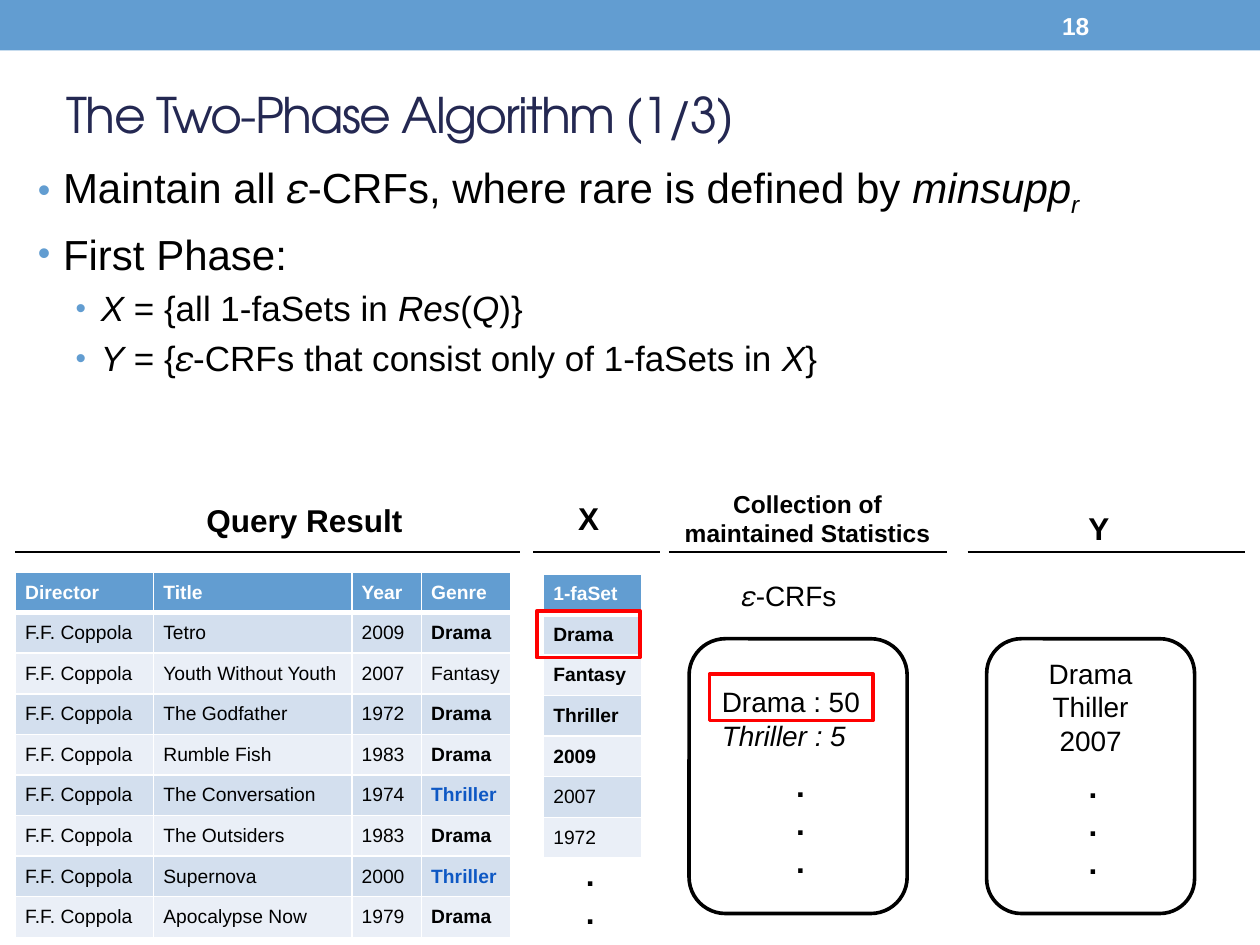
from dataclasses import dataclass

from lxml import etree
from pptx import Presentation
from pptx.dml.color import RGBColor
from pptx.enum import shapes, text
from pptx.oxml.ns import qn
from pptx.util import Pt


@dataclass(frozen=True)
class Theme:
    blue: str = "629DD1"
    navy: str = "242852"
    link: str = "0E58C4"
    red: str = "FF0000"
    black: str = "000000"
    white: str = "FFFFFF"
    bands: tuple = ("D3DFEE", "EAEFF7")
    body_font: str = "Arial"
    title_font: str = "TeX Gyre Adventor"
    title: int = 28
    levels: tuple = (24, 20)
    heading: int = 18
    label: int = 16
    small: int = 14
    cell: int = 11


THEME = Theme()

# Runs are (text, style): "i" italic, "b" bold, "s" subscript
TITLE = "The Two-Phase Algorithm (1/3)"
BULLETS = [
    (0, [("Maintain all 𝜀-CRFs, where rare is defined by ", ""), ("minsupp", "i"), ("r", "is")]),
    (0, [("First Phase:", "")]),
    (1, [("X", "i"), (" = {all 1-faSets in ", ""), ("Res", "i"), ("(", ""), ("Q", "i"), (")}", "")]),
    (1, [("Y", "i"), (" = {𝜀-CRFs that consist only of 1-faSets in ", ""), ("X", "i"), ("}", "")]),
]
DIRECTOR = "F.F. Coppola"
FILMS = [
    ("Tetro", "2009", "Drama"),
    ("Youth Without Youth", "2007", "Fantasy"),
    ("The Godfather", "1972", "Drama"),
    ("Rumble Fish", "1983", "Drama"),
    ("The Conversation", "1974", "Thriller"),
    ("The Outsiders", "1983", "Drama"),
    ("Supernova", "2000", "Thriller"),
    ("Apocalypse Now", "1979", "Drama"),
]
GENRE_STYLES = {"Drama": ("b", THEME.black), "Thriller": ("b", THEME.link)}
PLAIN = ("", THEME.black)
FASETS = ["Drama", "Fantasy", "Thriller", "2009", "2007", "1972"]
BOLD_FASETS = 4

# Text boxes: left, top, width, height, size, centred, wrapped, lines
HEADINGS = [
    (110.9, 283, 132.5, 29, THEME.heading, False, False, [("Query Result", "b")]),
    (323.3, 281.5, 26.6, 29, THEME.heading, False, False, [("X", "b")]),
    (382.3, 275.8, 158.4, 41, THEME.small, True, True,
     [("Collection of", "b"), ("maintained Statistics", "b")]),
    (614.9, 287.3, 22.3, 29, THEME.heading, False, True, [("Y", "b")]),
]
CONTENTS = [
    (416.9, 326.9, 68.4, 26.6, THEME.label, False, False, [("𝜀-CRFs", "")]),
    (405.4, 387.6, 153.4, 63, THEME.label, False, True,
     [("Drama : 50", ""), ("Thriller : 5", "i")]),
    (563.8, 371.5, 118.8, 65.5, THEME.label, True, True,
     [("Drama", ""), ("Thiller", ""), ("2007", "")]),
]
ELLIPSES = [(327.6, 485.3, 2), (447.8, 434.2, 3), (614.9, 434.9, 3)]  # left, top, dots
RULES = [(8.6, 297.4), (304.6, 377.3), (382.3, 541.4), (553, 711.4)]
RULE_TOP = 315.4
PANELS = [(393.8, 365, 124.6, 157), (563.8, 365, 118.8, 157)]
MARKERS = [(405.4, 385.2, 93.6, 26.6), (306.7, 349.2, 59, 26.6)]
ROW_HEIGHT = 23.2


def color(value):
    return RGBColor.from_string(value)


def add_run(paragraph, words, size, style="", fill=THEME.black, font=THEME.body_font):
    run = paragraph.add_run()
    run.text = words
    run.font.name = font
    run.font.size = Pt(size)
    run.font.bold = "b" in style
    run.font.italic = "i" in style
    run.font.color.rgb = color(fill)
    if "s" in style:
        run.font._element.set("baseline", "-25000")
    return run


def place(shape, left, top, width, height):
    shape.left, shape.top, shape.width, shape.height = map(Pt, (left, top, width, height))


def add_title(slide):
    title = slide.shapes.title
    place(title, 31, 31.7, 648, 67)
    frame = title.text_frame
    frame.auto_size = text.MSO_AUTO_SIZE.NONE
    frame.vertical_anchor = text.MSO_ANCHOR.MIDDLE
    paragraph = frame.paragraphs[0]
    paragraph.alignment = text.PP_ALIGN.LEFT
    run = add_run(paragraph, TITLE, THEME.title, "", THEME.navy, THEME.title_font)
    run.font._element.set("spc", "-100")


def add_bullet_mark(paragraph, level):
    properties = paragraph._p.get_or_add_pPr()
    properties.set("marL", str(Pt((14.4, 36)[level])))
    properties.set("indent", str(-Pt(14.4)))
    bullet_color = etree.SubElement(properties, qn("a:buClr"))
    etree.SubElement(bullet_color, qn("a:srgbClr")).set("val", THEME.blue)
    etree.SubElement(properties, qn("a:buSzPct")).set("val", "85000")
    etree.SubElement(properties, qn("a:buFont")).set("typeface", THEME.body_font)
    etree.SubElement(properties, qn("a:buChar")).set("char", "•")


def add_bullets(slide):
    body = slide.placeholders[1]
    place(body, 14.4, 88.6, 692, 142)
    frame = body.text_frame
    frame.auto_size = text.MSO_AUTO_SIZE.NONE
    for index, (level, runs) in enumerate(BULLETS):
        paragraph = frame.add_paragraph() if index else frame.paragraphs[0]
        size = THEME.levels[level]
        paragraph.level = level
        paragraph.space_before = Pt(size * 0.23)
        add_bullet_mark(paragraph, level)
        for words, style in runs:
            add_run(paragraph, words, size, style)


def add_text(slide, left, top, width, height, size, centred, wrapped, lines, fill=THEME.black):
    box = slide.shapes.add_textbox(*map(Pt, (left, top, width, height)))
    frame = box.text_frame
    frame.word_wrap = wrapped
    frame.auto_size = text.MSO_AUTO_SIZE.SHAPE_TO_FIT_TEXT
    for index, (words, style) in enumerate(lines):
        paragraph = frame.add_paragraph() if index else frame.paragraphs[0]
        paragraph.alignment = text.PP_ALIGN.CENTER if centred else text.PP_ALIGN.LEFT
        add_run(paragraph, words, size, style, fill)


def add_box(slide, kind, bounds, fill=None, line=None):
    shape = slide.shapes.add_shape(kind, *map(Pt, bounds))
    shape.shadow.inherit = False
    if fill:
        shape.fill.solid()
        shape.fill.fore_color.rgb = color(fill)
    else:
        shape.fill.background()
    if line:
        shape.line.color.rgb = color(line)
        shape.line.width = Pt(2.08)
    else:
        shape.line.fill.background()


def add_rule(slide, start, end):
    rule = slide.shapes.add_connector(
        shapes.MSO_CONNECTOR.STRAIGHT, Pt(start), Pt(RULE_TOP), Pt(end), Pt(RULE_TOP))
    rule.line.color.rgb = color(THEME.black)
    rule.line.width = Pt(1.5)
    etree.SubElement(rule._element.spPr, qn("a:effectLst"))


def format_cell(cell, words, style, ink, fill, bottom):
    cell.margin_left = cell.margin_right = Pt(5.6)
    cell.margin_top = cell.margin_bottom = Pt(2.8)
    cell.vertical_anchor = text.MSO_ANCHOR.MIDDLE
    add_run(cell.text_frame.paragraphs[0], words, THEME.cell, style, ink)
    properties = cell._tc.get_or_add_tcPr()
    for side, width in (("L", 1), ("R", 1), ("T", 1), ("B", bottom)):
        border = etree.SubElement(properties, qn(f"a:ln{side}"), w=str(Pt(width)))
        border_fill = etree.SubElement(border, qn("a:solidFill"))
        etree.SubElement(border_fill, qn("a:srgbClr")).set("val", THEME.white)
    cell.fill.solid()
    cell.fill.fore_color.rgb = color(fill)


def add_grid(slide, left, top, widths, header, rows):
    """Add a banded table; each body cell is (text, (style, colour))."""
    all_rows = [[(words, ("b", THEME.white)) for words in header]] + rows
    table = slide.shapes.add_table(
        len(all_rows), len(widths), Pt(left), Pt(top),
        Pt(sum(widths)), Pt(ROW_HEIGHT * len(all_rows))).table
    for column, width in zip(table.columns, widths):
        column.width = Pt(width)
    for index, row in enumerate(all_rows):
        table.rows[index].height = Pt(ROW_HEIGHT)
        fill = THEME.bands[(index - 1) % 2] if index else THEME.blue
        for cell, (words, (style, ink)) in zip(table.rows[index].cells, row):
            format_cell(cell, words, style, ink, fill, 1 if index else 3)


def main():
    presentation = Presentation()
    presentation.slide_width, presentation.slide_height = Pt(720), Pt(540)
    slide = presentation.slides.add_slide(presentation.slide_layouts[1])
    kinds = shapes.MSO_SHAPE

    add_box(slide, kinds.RECTANGLE, (0, 0, 720, 28.8), THEME.blue)
    add_title(slide)
    add_bullets(slide)
    add_text(slide, 599.8, 2.6, 84, 24, THEME.small, False, True, [("18", "b")], THEME.white)

    films = [[(DIRECTOR, PLAIN), (name, PLAIN), (year, PLAIN),
              (genre, GENRE_STYLES.get(genre, PLAIN))] for name, year, genre in FILMS]
    add_grid(slide, 8.8, 326.9, (79, 113.3, 39.8, 51.2),
             ("Director", "Title", "Year", "Genre"), films)
    fasets = [[(name, ("b" if index < BOLD_FASETS else "", THEME.black))]
              for index, name in enumerate(FASETS)]
    add_grid(slide, 310.6, 327.9, (56,), ("1-faSet",), fasets)

    for start, end in RULES:
        add_rule(slide, start, end)
    for bounds in PANELS:
        add_box(slide, kinds.ROUNDED_RECTANGLE, bounds, THEME.white, THEME.black)
    for box in HEADINGS + CONTENTS:
        add_text(slide, *box)
    for left, top, dots in ELLIPSES:
        add_text(slide, left, top, 19.4, 7.2 + 21.9 * dots, THEME.heading, True, False,
                 [(".", "b")] * dots)
    for bounds in MARKERS:
        add_box(slide, kinds.RECTANGLE, bounds, line=THEME.red)
    presentation.save("out.pptx")


if __name__ == "__main__":
    main()
